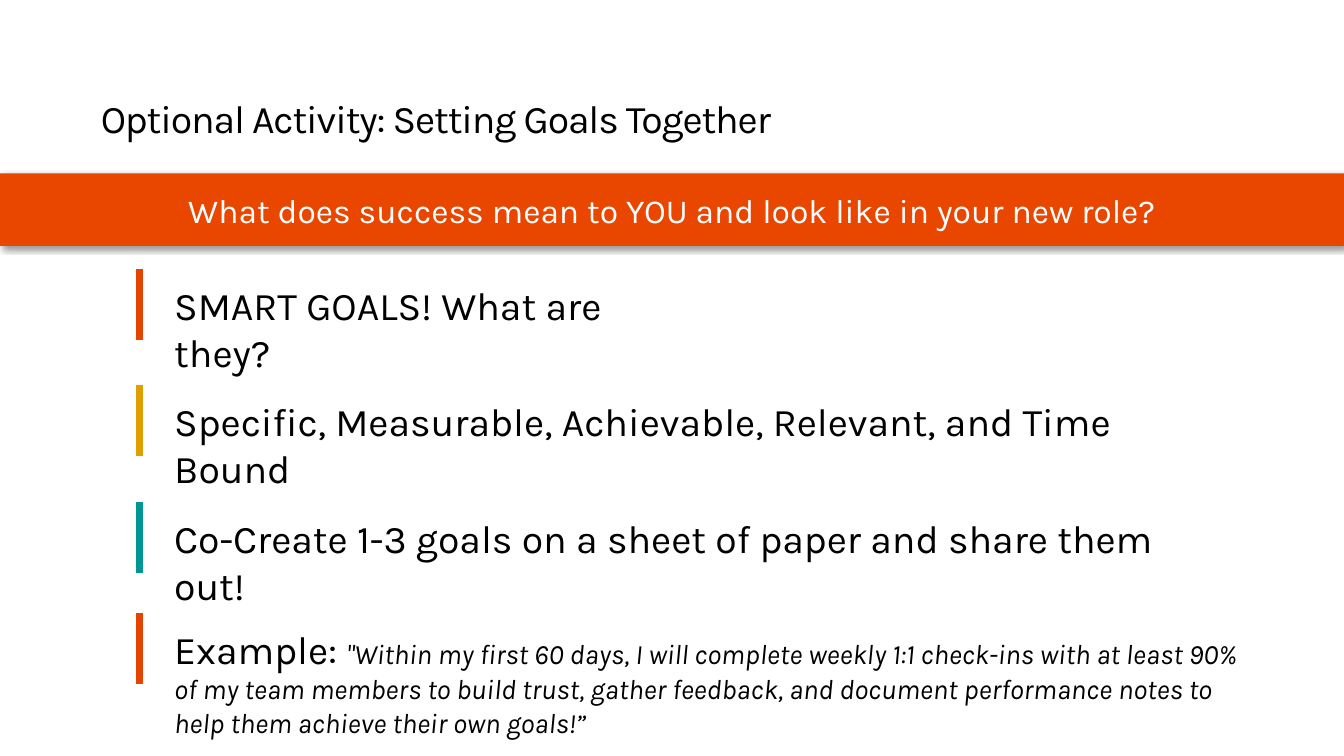
"""Build the goal-setting activity slide."""
from dataclasses import dataclass

from lxml.etree import SubElement
from pptx import Presentation
from pptx.dml.color import RGBColor
from pptx.enum.shapes import MSO_CONNECTOR as Line, MSO_SHAPE as Shape
from pptx.enum.text import MSO_ANCHOR as Anchor, PP_ALIGN as Align
from pptx.oxml.ns import qn
from pptx.util import Cm, Pt


@dataclass(frozen=True)
class Theme:
    font: str = "Karla"
    black: str = "000000"
    white: str = "FFFFFF"
    band: str = "E94600"
    orange: str = "E44400"
    gold: str = "E19E00"
    teal: str = "009693"
    large: int = 28
    medium: int = 24
    small: int = 20


T = Theme()


def add_run(p, text, size=T.large, color=T.black, italic=None, spacing=None):
    r = p.add_run()
    r.text = text
    r.font.name = T.font
    r.font.size = Pt(size)
    r.font.italic = italic
    r.font.color.rgb = RGBColor.from_string(color)
    if spacing is not None:
        r.font._element.set("spc", str(round(spacing * 100)))


prs = Presentation()
prs.slide_width, prs.slide_height = Cm(33.87), Cm(19.05)
s = prs.slides.add_slide(prs.slide_layouts[6])

title = s.shapes.add_textbox(Cm(2.54), Cm(1.93), Cm(28.78), Cm(1.65))
tf = title.text_frame
tf.word_wrap = True
tf.vertical_anchor = Anchor.BOTTOM
tf.margin_left = tf.margin_right = tf.margin_bottom = 0
p = tf.paragraphs[0]
p.line_spacing = 0.9
add_run(p, "Optional Activity: Setting Goals Together", spacing=-0.8)

band = s.shapes.add_shape(Shape.RECTANGLE, 0, Cm(4.37), prs.slide_width, Cm(1.83))
band.fill.solid()
band.fill.fore_color.rgb = RGBColor.from_string(T.band)
band.line.fill.background()
band.shadow.inherit = False
effects = band._element.spPr.find(qn("a:effectLst"))
shadow = SubElement(effects, qn("a:outerShdw"), blurRad=str(Pt(4)), dist=str(Pt(3)),
                    dir="2700000", algn="tl", rotWithShape="0")
shade = SubElement(shadow, qn("a:srgbClr"), val=T.black)
SubElement(shade, qn("a:alpha"), val="40000")
tf = band.text_frame
tf.word_wrap = True
tf.vertical_anchor = Anchor.MIDDLE
p = tf.paragraphs[0]
p.alignment = Align.CENTER
add_run(p, "What does success mean to YOU and look like in your new role?",
        size=T.medium, color=T.white)

points = [
    (6.78, 13.61, 1.45, T.orange, "SMART GOALS! What are they?", ""),
    (9.7, 25.5, 1.45, T.gold,
     "Specific, Measurable, Achievable, Relevant, and Time Bound", ""),
    (12.65, 25.81, 1.45, T.teal,
     "Co-Create 1-3 goals on a sheet of paper and share them out!", ""),
    (15.44, 27.53, 3.4, T.orange, "Example: ",
     "\"Within my first 60 days, I will complete weekly 1:1 check-ins with at least 90% "
     "of my team members to build trust, gather feedback, and document performance "
     "notes to help them achieve their own goals!”"),
]
for top, width, height, color, text, example in points:
    group = s.shapes.add_group_shape()
    box = group.shapes.add_textbox(Cm(4.14), Cm(top + 0.18), Cm(width), Cm(height))
    tf = box.text_frame
    tf.word_wrap = True
    p = tf.paragraphs[0]
    add_run(p, text)
    if example:
        add_run(p, example, size=T.small, italic=True)
    bar = group.shapes.add_connector(Line.STRAIGHT, Cm(3.51), Cm(top),
                                     Cm(3.51), Cm(top + 1.8))
    bar.line.color.rgb = RGBColor.from_string(color)
    bar.line.width = Pt(5)
    SubElement(bar._element.spPr, qn("a:effectLst"))

prs.save("out.pptx")
